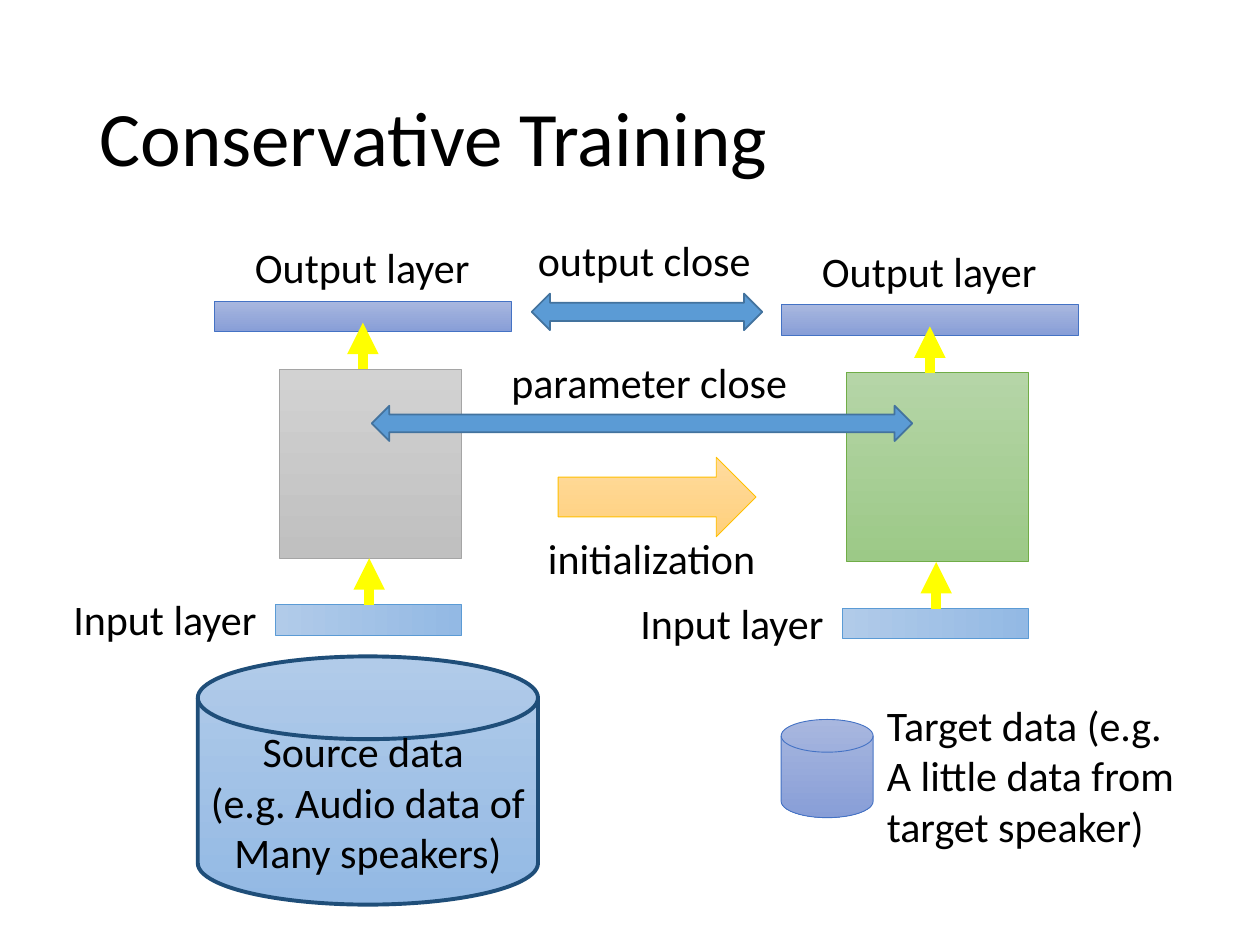
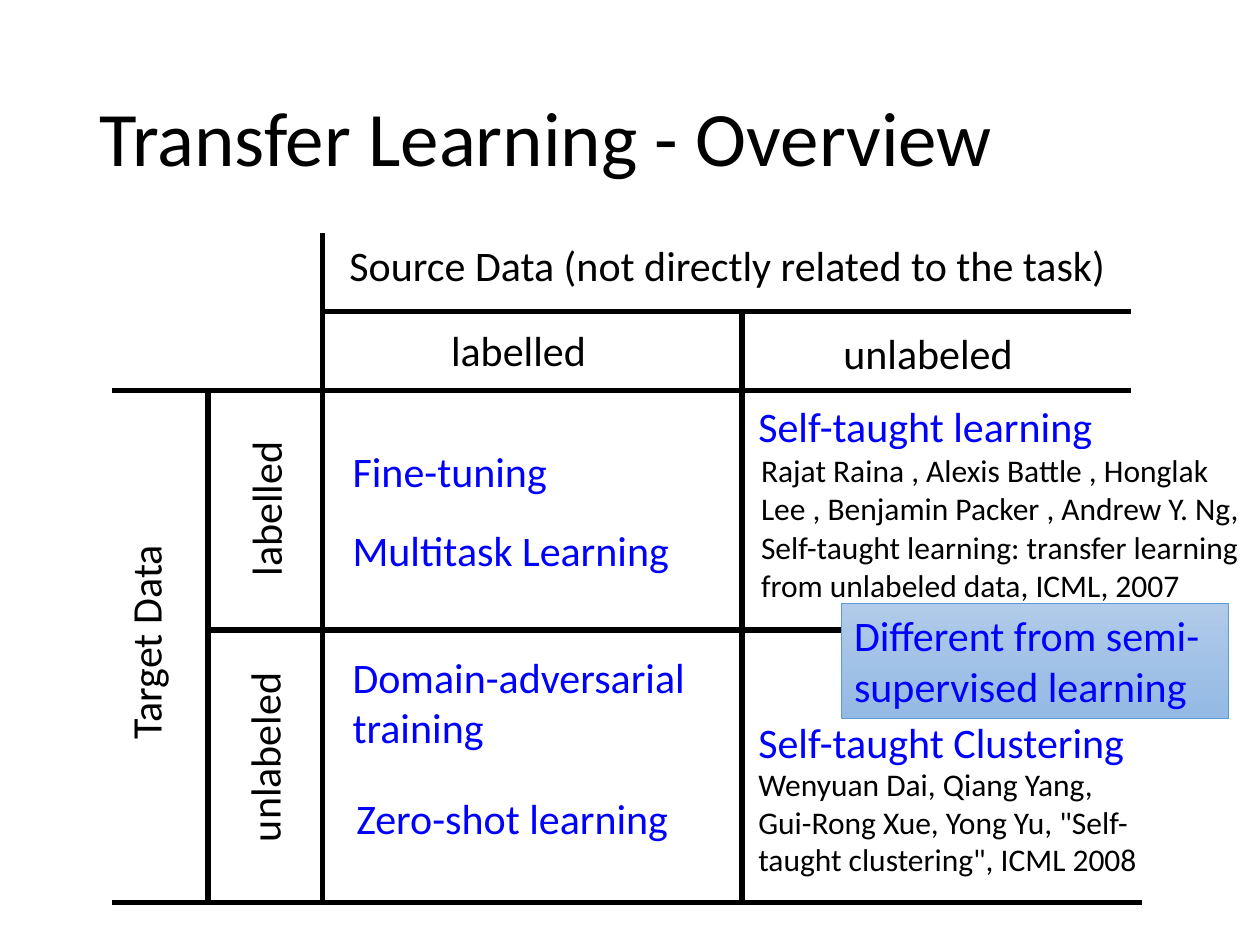
from pptx import Presentation
from pptx.dml.color import RGBColor
from pptx.enum import shapes as kinds, text as layout
from pptx.oxml.ns import qn
from pptx.util import Inches, Pt
from lxml import etree

FONT = "Calibri"
BLACK, BLUE, YELLOW, WHITE = "000000", "0000FF", "FFFF00", "FFFFFF"
# Each style is gradient start, gradient end, outline
SKY = ("B1CBE9", "93B9E4", "5B9BD5")
NAVY_SKY = ("B1CBE9", "93B9E4", "1F4E79")
INDIGO = ("A8B7DF", "889ED7", "4472C4")
GRAY = ("D2D2D2", "C0C0C0", "A5A5A5")
GREEN = ("B5D5A7", "9CC987", "70AD47")
GOLD = ("FFDB9E", "FFD07C", "FFC000")
STEEL = ("5B9BD5", "5B9BD5", "43739E")

SHAPE = kinds.MSO_SHAPE
CENTER, LEFT = layout.PP_ALIGN.CENTER, layout.PP_ALIGN.LEFT
TOP, MIDDLE = layout.MSO_ANCHOR.TOP, layout.MSO_ANCHOR.MIDDLE


def color(value):
    return RGBColor.from_string(value)


def inches(*values):
    return [Inches(value) for value in values]


def write(frame, content, size=24, ink=BLACK, align=LEFT, anchor=TOP, spacing=None):
    """Fill a text frame, one paragraph for each line of content."""
    frame.word_wrap = True
    frame.auto_size = layout.MSO_AUTO_SIZE.NONE
    frame.vertical_anchor = anchor
    for index, line in enumerate(content.split("\n")):
        paragraph = frame.add_paragraph() if index else frame.paragraphs[0]
        paragraph.alignment = align
        paragraph.line_spacing = spacing
        run = paragraph.add_run()
        run.text = line
        run.font.name = FONT
        run.font.size = Pt(size)
        run.font.color.rgb = color(ink)


def add_label(slide, content, box, rotation=0, **text_format):
    label = slide.shapes.add_textbox(*inches(*box))
    label.rotation = rotation
    write(label.text_frame, content, **text_format)


def add_block(slide, kind, box, style, line_width=0.5, angle=270):
    block = slide.shapes.add_shape(kind, *inches(*box))
    block.shadow.inherit = False
    start, end, outline = style
    if start == end:
        block.fill.solid()
        block.fill.fore_color.rgb = color(start)
    else:
        block.fill.gradient()
        block.fill.gradient_angle = angle
        for stop, value in zip(block.fill.gradient_stops, (start, end)):
            stop.color.rgb = color(value)
    block.line.color.rgb = color(outline)
    block.line.width = Pt(line_width)
    return block


def add_line(slide, x1, y1, x2, y2, ink=BLACK, width=3, arrow=False):
    line = slide.shapes.add_connector(
        kinds.MSO_CONNECTOR.STRAIGHT, *inches(x1, y1, x2, y2))
    line.line.color.rgb = color(ink)
    line.line.width = Pt(width)
    properties = line._element.spPr
    if arrow:
        outline = properties.find(qn("a:ln"))
        etree.SubElement(outline, qn("a:tailEnd"), type="triangle")
    etree.SubElement(properties, qn("a:effectLst"))


def add_titled_slide(presentation, title):
    slide = presentation.slides.add_slide(presentation.slide_layouts[5])
    holder = slide.shapes.title
    holder.left, holder.top, holder.width, holder.height = inches(0.69, 0.4, 8.62, 1.45)
    write(holder.text_frame, title, size=44, anchor=MIDDLE, spacing=0.9)
    return slide


def add_network(slide, left, top, body_style):
    """Draw a network from input layer to output layer, with its labels."""
    add_block(slide, SHAPE.RECTANGLE, (left + 1.79, top + 1.06, 1.44, 1.5), body_style)
    add_block(slide, SHAPE.RECTANGLE, (left + 1.76, top + 2.93, 1.47, 0.24), SKY, angle=0)
    add_block(slide, SHAPE.RECTANGLE, (left + 1.27, top + 0.52, 2.36, 0.24), INDIGO)
    add_label(slide, "Input layer", (left, top + 2.79, 1.76, 0.5), align=CENTER)
    add_label(slide, "Output layer", (left + 1.07, top, 2.75, 0.5), align=CENTER)
    for x, y in ((2.5, 2.93), (2.45, 1.06)):
        add_line(slide, left + x, top + y, left + x, top + y - 0.37,
                 ink=YELLOW, width=6, arrow=True)


def add_data_sources(slide, left, top):
    """Draw the large source store and the small target store."""
    source = add_block(slide, SHAPE.FLOWCHART_MAGNETIC_DISK,
                       (left, top, 2.7, 1.97), NAVY_SKY, line_width=2.25)
    write(source.text_frame, "Source data \n(e.g. Audio data of \nMany speakers)",
          align=CENTER, anchor=MIDDLE)
    add_block(slide, SHAPE.FLOWCHART_MAGNETIC_DISK,
              (left + 4.63, top + 0.5, 0.73, 0.78), INDIGO)
    add_label(slide, "Target data (e.g. A little data from target speaker)",
              (left + 5.37, top + 0.29, 2.52, 1.31))


def add_constraints(slide, left, top):
    """Draw the arrows that tie the two networks together."""
    add_block(slide, SHAPE.RIGHT_ARROW, (left + 1.48, top + 1.82, 1.57, 0.63), GOLD)
    add_block(slide, SHAPE.LEFT_RIGHT_ARROW, (left + 1.27, top + 0.52, 1.83, 0.29),
              STEEL, line_width=1)
    add_block(slide, SHAPE.LEFT_RIGHT_ARROW, (left, top + 1.41, 4.29, 0.28),
              STEEL, line_width=1)
    for content, x, y, width in (("output close", 1.22, 0, 2.02),
                                 ("parameter close", 1.01, 0.97, 2.68),
                                 ("initialization", 1.3, 2.37, 1.98)):
        add_label(slide, content, (left + x, top + y, width, 0.5))


def build_training_slide(presentation):
    slide = add_titled_slide(presentation, "Conservative Training")
    add_data_sources(slide, 1.57, 5.21)
    add_network(slide, 0.43, 1.87, GRAY)
    add_network(slide, 4.93, 1.9, GREEN)
    add_constraints(slide, 2.95, 1.81)


def add_overview_grid(slide, left, top):
    """Draw the rules and the row and column headings."""
    target_x, source_x, middle_x = left + 0.76, left + 1.67, left + 5
    header_y, label_y, middle_y = top + 0.62, top + 1.25, top + 3.15
    right, bottom = left + 8.09, top + 5.31
    for x, start in ((source_x, top), (middle_x, header_y), (target_x, label_y)):
        add_line(slide, x, start, x, bottom)
    for y, start, end in ((header_y, source_x, right), (label_y, left, right),
                          (middle_y, target_x, right), (bottom, left, right + 0.08)):
        add_line(slide, start, y, end, y)

    for content, x, y, width, rotation in (
            ("Source Data (not directly related to the task) ", 1.67, 0, 6.5, 0),
            ("labelled", 2.38, 0.68, 1.69, 0),
            ("unlabeled", 5.63, 0.7, 1.69, 0),
            ("Target Data ", -1.54, 2.96, 3.6, 270),
            ("labelled", 0.37, 1.94, 1.69, 270),
            ("unlabeled", 0.36, 3.91, 1.69, 270)):
        add_label(slide, content, (left + x, top + y, width, 0.5),
                  rotation=rotation, align=CENTER)


def add_methods(slide, left, top):
    """Place the methods for labelled source data."""
    for content, x, y, height in (("Fine-tuning", 0, 0, 0.5),
                                  ("Multitask Learning", 0, 0.62, 0.5),
                                  ("Domain-adversarial training", 0, 1.63, 0.91),
                                  ("Zero-shot learning", 0.03, 2.75, 0.5)):
        add_label(slide, content, (left + x, top + y, 3.04, height), ink=BLUE)


def add_citation_table(slide, box, content):
    table = slide.shapes.add_table(1, 1, *inches(*box)).table
    table.first_row = table.horz_banding = False
    cell = table.cell(0, 0)
    cell.fill.solid()
    cell.fill.fore_color.rgb = color(WHITE)
    cell.margin_left = cell.margin_right = Inches(0.09)
    cell.margin_top = cell.margin_bottom = Inches(0.02)
    write(cell.text_frame, content, size=18)


def add_self_taught(slide, left, top):
    """Place the methods for unlabeled source data, with their citations."""
    add_label(slide, "Self-taught learning", (left, top, 3.51, 0.5), ink=BLUE)
    add_label(slide, "Self-taught Clustering", (left, top + 2.51, 3.25, 0.5), ink=BLUE)
    add_citation_table(
        slide, (left + 0.03, top + 0.44, 3.99, 1.24),
        "Rajat Raina , Alexis Battle , Honglak Lee , Benjamin Packer , Andrew Y. Ng, "
        "Self-taught learning: transfer learning from unlabeled data, ICML, 2007")
    add_label(slide, "Wenyuan Dai, Qiang Yang, Gui-Rong Xue, Yong Yu, "
              "\"Self-taught clustering\", ICML 2008",
              (left, top + 2.89, 3.32, 1.01), size=18)
    remark = add_block(slide, SHAPE.RECTANGLE, (left + 0.76, top + 1.66, 3.07, 0.91), SKY)
    write(remark.text_frame, "Different from semi-supervised learning", ink=BLUE)


def build_overview_slide(presentation):
    slide = add_titled_slide(presentation, "Transfer Learning - Overview")
    add_overview_grid(slide, 0.89, 1.85)
    add_methods(slide, 2.7, 3.49)
    add_self_taught(slide, 5.92, 3.13)


def main():
    presentation = Presentation()
    presentation.slide_width, presentation.slide_height = inches(10, 7.5)
    build_training_slide(presentation)
    build_overview_slide(presentation)
    presentation.save("out.pptx")


if __name__ == "__main__":
    main()
